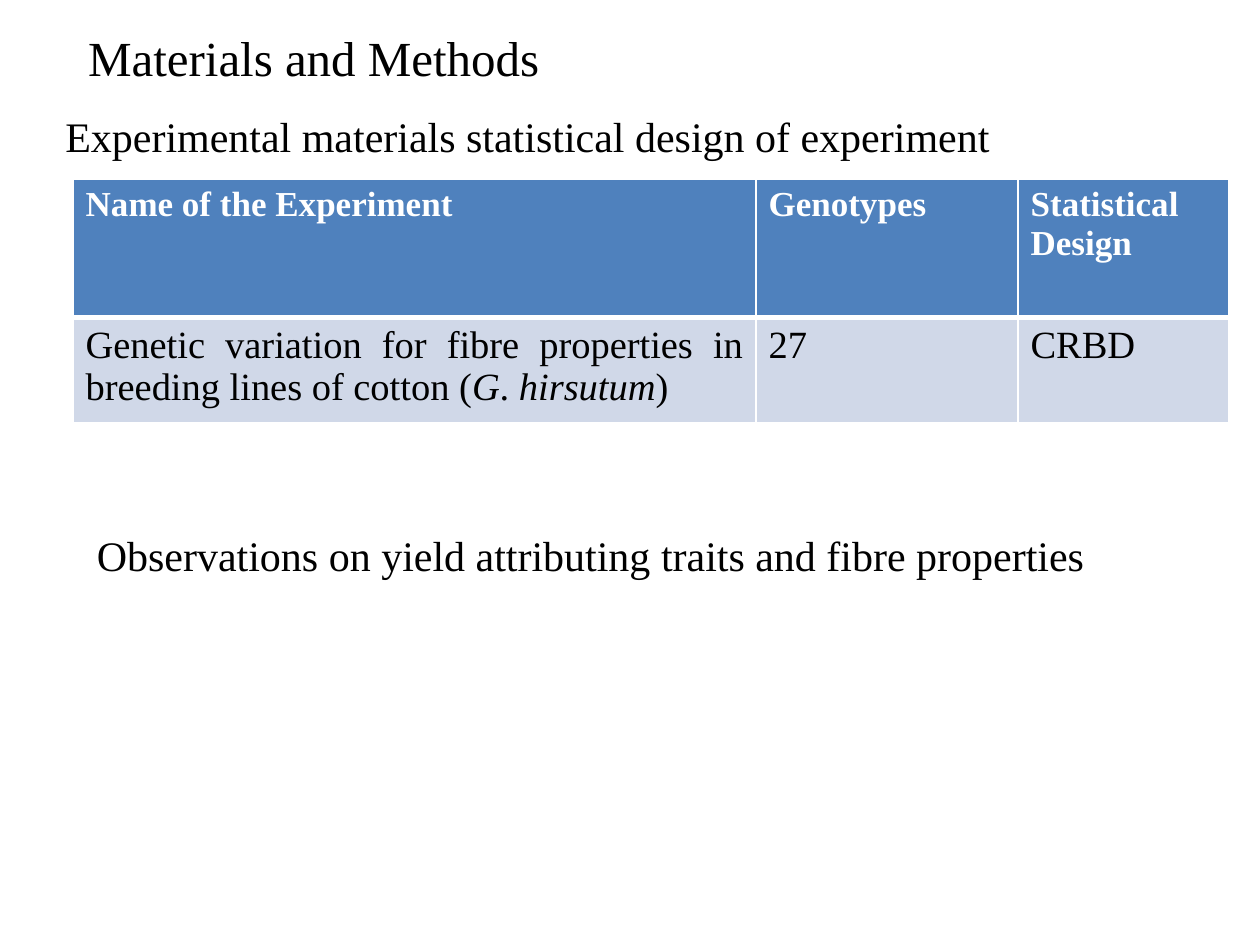
from lxml import etree
from pptx import Presentation, util as u
from pptx.dml.color import RGBColor
from pptx.enum import text
from pptx.oxml.ns import qn

BLACK = RGBColor(0x00, 0x00, 0x00)
WHITE = RGBColor(0xFF, 0xFF, 0xFF)
BLUE = RGBColor(0x4F, 0x81, 0xBD)
PALE = RGBColor(0xD0, 0xD8, 0xE8)
FONT = "Times New Roman"
WIDTH, HEIGHT = 10, 7.5

HEADINGS = [
    ("Experimental materials statistical design of experiment",
     24, (0.42, 0.83, 7.57, 0.91), (0.1, 0.05), False),
    ("Observations on yield attributing traits and fibre properties",
     24, (0.67, 3.83, 9.17, 1.25), (0.1, 0.37), True),
    ("Materials and Methods",
     28, (0.5, 0.17, 4.33, 0.57), (0.2, 0.05), True),
]
HEADER = ["Name of the Experiment", "Genotypes", "Statistical Design"]
EXPERIMENT = [
    [("Genetic variation for fibre properties in breeding lines of cotton (", False),
     ("G", True), (". ", False), ("hirsutum", True), (")", False)],
    [("27", False)],
    [("CRBD", False)],
]
TABLE_LEFT, TABLE_TOP = 0.58, 1.42
COLUMNS = [5.42, 2.08, 1.67]
ROWS = [1.1, 0.83]


def style(run, size, color, bold=False, italic=False):
    font = run.font
    font.name, font.size = FONT, u.Pt(size)
    font.bold, font.italic = bold, italic
    font.color.rgb = color


def add_heading(slide, words, size, box, inset, wrap):
    heading = slide.shapes.add_textbox(*map(u.Inches, box)).text_frame
    heading.text = words
    heading.word_wrap = wrap
    heading.margin_left, heading.margin_top = map(u.Inches, inset)
    style(heading.paragraphs[0].runs[0], size, BLACK)


def set_borders(cell, bottom):
    props = cell._tc.get_or_add_tcPr()
    sides = [("a:lnL", 1), ("a:lnR", 1), ("a:lnT", 1), ("a:lnB", bottom)]
    for place, (side, width) in enumerate(sides):
        line = etree.Element(qn(side), w=str(u.Pt(width)))
        fill = etree.SubElement(line, qn("a:solidFill"))
        etree.SubElement(fill, qn("a:srgbClr"), val=str(WHITE))
        props.insert(place, line)


def fill_cell(cell, pieces, size, color, bold, background, bottom):
    paragraph = cell.text_frame.paragraphs[0]
    paragraph.alignment = text.PP_ALIGN.LEFT if bold else text.PP_ALIGN.JUSTIFY
    for words, italic in pieces:
        run = paragraph.add_run()
        run.text = words
        style(run, size, color, bold, italic)
    cell.fill.solid()
    cell.fill.fore_color.rgb = background
    set_borders(cell, bottom)


def add_experiments(slide):
    table = slide.shapes.add_table(
        len(ROWS), len(COLUMNS), u.Inches(TABLE_LEFT), u.Inches(TABLE_TOP),
        u.Inches(sum(COLUMNS)), u.Inches(sum(ROWS))).table
    for column, width in zip(table.columns, COLUMNS):
        column.width = u.Inches(width)
    for row, height in zip(table.rows, ROWS):
        row.height = u.Inches(height)
    for i, (title, pieces) in enumerate(zip(HEADER, EXPERIMENT)):
        fill_cell(table.cell(0, i), [(title, False)], 20, WHITE, True, BLUE, 3)
        fill_cell(table.cell(1, i), pieces, 22, BLACK, False, PALE, 1)
        set_top = table.cell(1, i)._tc.tcPr.find(qn("a:lnT"))
        set_top.set("w", str(u.Pt(3)))


def main():
    deck = Presentation()
    deck.slide_width, deck.slide_height = u.Inches(WIDTH), u.Inches(HEIGHT)
    slide = deck.slides.add_slide(deck.slide_layouts[6])
    for heading in HEADINGS:
        add_heading(slide, *heading)
    add_experiments(slide)
    deck.save("out.pptx")


if __name__ == "__main__":
    main()
